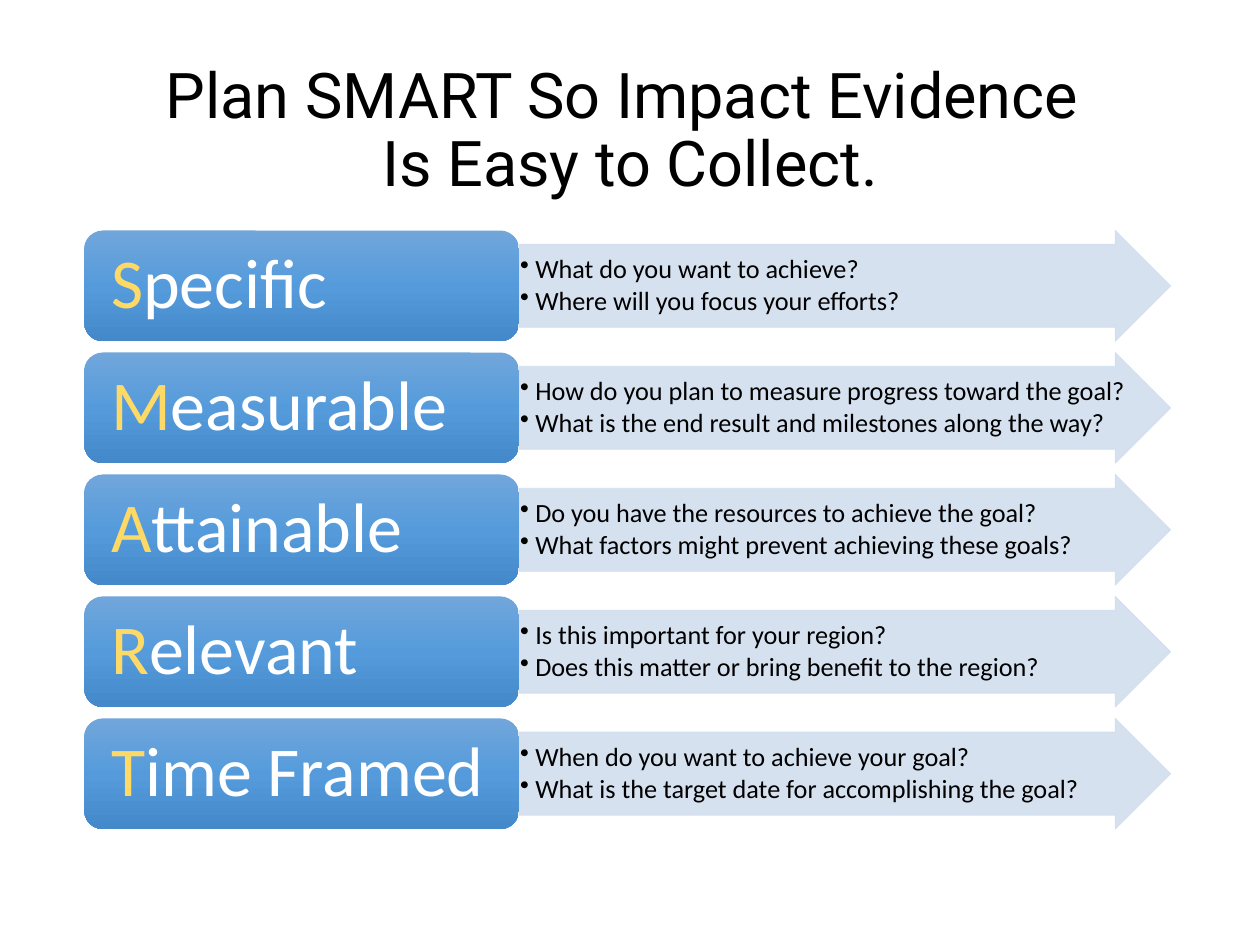
from copy import deepcopy

from lxml.etree import SubElement
from pptx import Presentation
from pptx.dml.color import RGBColor
from pptx.enum.shapes import MSO_SHAPE
from pptx.enum.text import MSO_ANCHOR, MSO_AUTO_SIZE, PP_ALIGN
from pptx.oxml.ns import qn
from pptx.util import Inches, Pt

BLACK = RGBColor(0x00, 0x00, 0x00)
WHITE = RGBColor(0xFF, 0xFF, 0xFF)
GOLD = RGBColor(0xFF, 0xD9, 0x66)
PALE_BLUE = RGBColor(0xD2, 0xDE, 0xEF)
LABEL_STOPS = [
    (0, RGBColor(0x71, 0xA6, 0xDB)),
    (0.5, RGBColor(0x55, 0x9B, 0xDB)),
    (1, RGBColor(0x44, 0x8A, 0xCA)),
]

GOALS = [
    ("Specific", ["What do you want to achieve?",
                  "Where will you focus your efforts?"]),
    ("Measurable", ["How do you plan to measure progress toward the goal?",
                    "What is the end result and milestones along the way?"]),
    ("Attainable", ["Do you have the resources to achieve the goal?",
                    "What factors might prevent achieving these goals?"]),
    ("Relevant", ["Is this important for your region?",
                  "Does this matter or bring benefit to the region?"]),
    ("Time Framed", ["When do you want to achieve your goal?",
                     "What is the target date for accomplishing the goal?"]),
]


def format_font(font, name, size, color):
    font.name = name
    font.size = Pt(size)
    font.color.rgb = color


def set_up_frame(text_frame, left, top, right, bottom):
    text_frame.word_wrap = True
    text_frame.vertical_anchor = MSO_ANCHOR.MIDDLE
    text_frame.margin_left = Inches(left)
    text_frame.margin_top = Inches(top)
    text_frame.margin_right = Inches(right)
    text_frame.margin_bottom = Inches(bottom)


def make_translucent(shape, percent):
    for color in shape._element.spPr.iter(qn("a:srgbClr")):
        SubElement(color, qn("a:alpha"), val=str(percent * 1000))


def fill_gradient(fill, stops):
    fill.gradient()
    fill.gradient_angle = 270
    first_stop = fill._fill._gradFill.find(qn("a:gsLst"))[0]
    first_stop.addnext(deepcopy(first_stop))
    for stop, (position, color) in zip(fill.gradient_stops, stops):
        stop.position = position
        stop.color.rgb = color


def add_bullet(paragraph, indent):
    properties = paragraph._p.get_or_add_pPr()
    properties.set("marL", str(indent))
    properties.set("indent", str(-indent))
    SubElement(properties, qn("a:buChar"), char="•")


def add_title(slide, left, top, width, height):
    title = slide.shapes.title
    title.left, title.top, title.width, title.height = left, top, width, height
    text_frame = title.text_frame
    text_frame.text = "Plan SMART So Impact Evidence \vIs Easy to Collect."
    text_frame.auto_size = MSO_AUTO_SIZE.NONE
    set_up_frame(text_frame, 0.1, 0.05, 0.1, 0.05)
    paragraph = text_frame.paragraphs[0]
    paragraph.alignment = PP_ALIGN.CENTER
    paragraph.line_spacing = 0.9
    for run in paragraph.runs:
        format_font(run.font, "Roboto", 36, BLACK)


def add_question_arrow(slide, questions, left, top, width, height):
    arrow = slide.shapes.add_shape(MSO_SHAPE.RIGHT_ARROW, left, top, width, height)
    arrow.adjustments[0] = 0.75
    arrow.adjustments[1] = 0.5
    arrow.shadow.inherit = False
    arrow.fill.solid()
    arrow.fill.fore_color.rgb = PALE_BLUE
    arrow.line.color.rgb = PALE_BLUE
    arrow.line.width = Pt(0.5)
    make_translucent(arrow, 90)

    text_frame = arrow.text_frame
    text_frame.text = "\n".join(questions)
    set_up_frame(text_frame, 0.01, 0.01, 0.01, 0.01)
    for paragraph in text_frame.paragraphs:
        paragraph.level = 1
        paragraph.alignment = PP_ALIGN.LEFT
        paragraph.line_spacing = 0.9
        paragraph.space_after = Pt(2.25)
        add_bullet(paragraph, Inches(0.12))
        format_font(paragraph.runs[0].font, "Calibri", 15, BLACK)


def add_goal_label(slide, goal, left, top, width, height):
    label = slide.shapes.add_shape(MSO_SHAPE.ROUNDED_RECTANGLE, left, top, width, height)
    label.shadow.inherit = False
    label.line.fill.background()
    fill_gradient(label.fill, LABEL_STOPS)

    text_frame = label.text_frame
    set_up_frame(text_frame, 0.17, 0.08, 0.17, 0.08)
    paragraph = text_frame.paragraphs[0]
    paragraph.alignment = PP_ALIGN.LEFT
    paragraph.line_spacing = 0.9
    for text, color in ((goal[0], GOLD), (goal[1:], WHITE)):
        run = paragraph.add_run()
        run.text = text
        format_font(run.font, "Calibri", 40, color)


def add_goal_rows(slide, left, top, width, height):
    gap = Inches(0.09)
    row_height = (height - gap * (len(GOALS) - 1)) // len(GOALS)
    label_width = int(width * 0.4)
    for index, (goal, questions) in enumerate(GOALS):
        row_top = top + index * (row_height + gap)
        add_question_arrow(slide, questions, left + label_width, row_top,
                           width - label_width, row_height)
        add_goal_label(slide, goal, left, row_top, label_width, row_height)


def main():
    presentation = Presentation()
    presentation.slide_width = Inches(10)
    presentation.slide_height = Inches(7.5)
    slide = presentation.slides.add_slide(presentation.slide_layouts[5])
    add_title(slide, Inches(0.69), Inches(0.59), Inches(8.62), Inches(0.91))
    add_goal_rows(slide, Inches(0.67), Inches(1.83), Inches(8.62), Inches(4.75))
    presentation.save("out.pptx")


if __name__ == "__main__":
    main()
